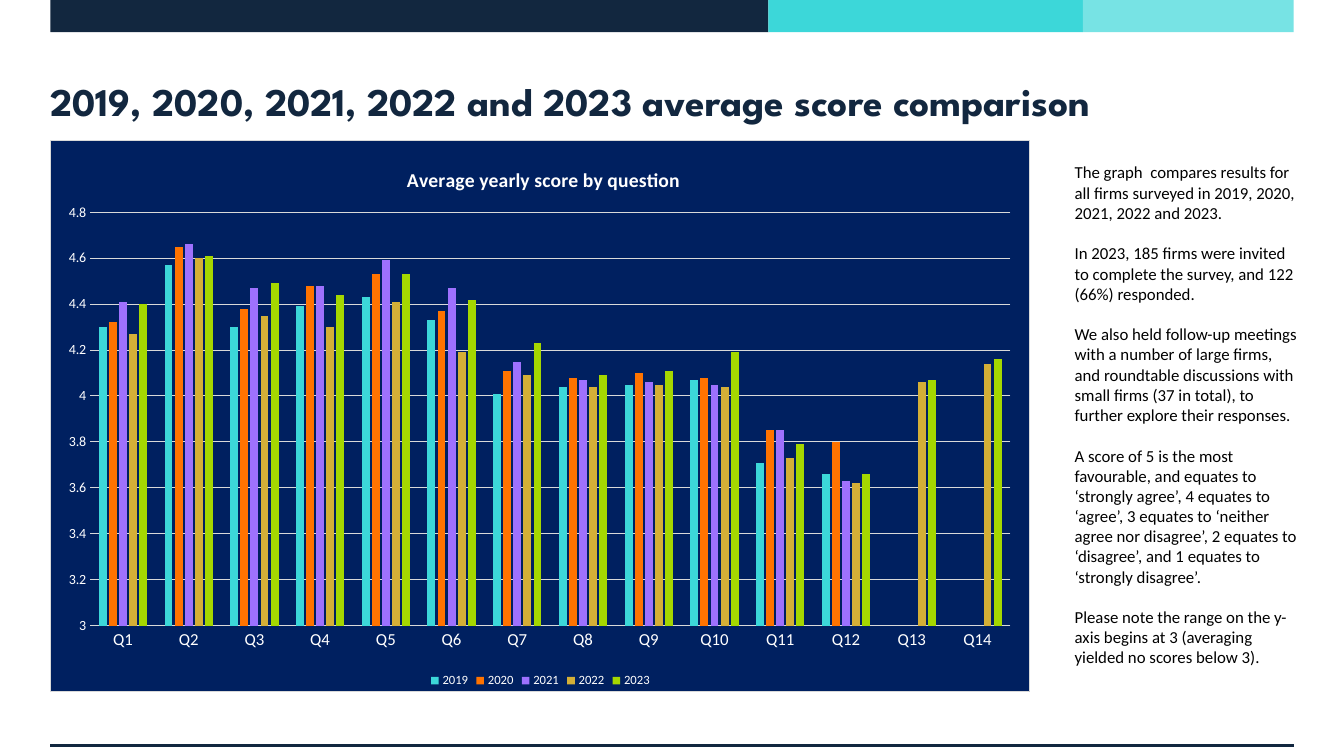
import pptx
import pptx.chart.data
import pptx.dml.color
import pptx.enum.chart
import pptx.enum.shapes
import pptx.enum.text
import pptx.oxml
import pptx.oxml.ns
import pptx.util

Inches, Pt = pptx.util.Inches, pptx.util.Pt
RGBColor = pptx.dml.color.RGBColor
qn, nsdecls = pptx.oxml.ns.qn, pptx.oxml.ns.nsdecls
parse_xml = pptx.oxml.parse_xml

NAVY = RGBColor(0x12, 0x27, 0x3F)
TEAL = RGBColor(0x3C, 0xD7, 0xD9)
AQUA = RGBColor(0x77, 0xE3, 0xE4)
ORANGE = RGBColor(0xFF, 0x73, 0x00)
PURPLE = RGBColor(0x9E, 0x71, 0xFE)
GOLD = RGBColor(0xD4, 0xAF, 0x37)
LIME = RGBColor(0xA5, 0xD7, 0x00)
PANEL = RGBColor(0x00, 0x20, 0x60)
GREY = RGBColor(0xD9, 0xD9, 0xD9)
WHITE = RGBColor(0xFF, 0xFF, 0xFF)
BLACK = RGBColor(0x00, 0x00, 0x00)

# Content
TITLE = "2019, 2020, 2021, 2022 and 2023 average score comparison"
CHART_TITLE = "Average yearly score by question"
NOTES = [
    "The graph  compares results for all firms surveyed in 2019, 2020, 2021, 2022 and 2023.",
    "In 2023, 185 firms were invited to complete the survey, and 122 (66%) responded.",
    "We also held follow-up meetings with a number of large firms, and roundtable "
    "discussions with small firms (37 in total), to further explore their responses.",
    "A score of 5 is the most favourable, and equates to ‘strongly agree’, 4 equates to "
    "‘agree’, 3 equates to ‘neither agree nor disagree’, 2 equates to ‘disagree’, and "
    "1 equates to ‘strongly disagree’.",
    "Please note the range on the y-axis begins at 3 (averaging yielded no scores below 3).",
]
SCORES = [
    ("2019", TEAL, [4.3, 4.57, 4.3, 4.39, 4.43, 4.33, 4.01, 4.04, 4.05, 4.07,
                    3.71, 3.66, None, None]),
    ("2020", ORANGE, [4.32, 4.65, 4.38, 4.48, 4.53, 4.37, 4.11, 4.08, 4.1, 4.08,
                      3.85, 3.8, None, None]),
    ("2021", PURPLE, [4.41, 4.66, 4.47, 4.48, 4.59, 4.47, 4.15, 4.07, 4.06, 4.05,
                      3.85, 3.63, None, None]),
    ("2022", GOLD, [4.27, 4.6, 4.35, 4.3, 4.41, 4.19, 4.09, 4.04, 4.05, 4.04,
                    3.73, 3.62, 4.06, 4.14]),
    ("2023", LIME, [4.4, 4.61, 4.49, 4.44, 4.53, 4.42, 4.23, 4.09, 4.11, 4.19,
                    3.79, 3.66, 4.07, 4.16]),
]
BANDS = [(7.12, NAVY), (3.12, TEAL), (2.09, AQUA)]
LEFT, RIGHT = 0.5, 12.83


def style_font(font, size, color, name="Calibri", bold=False):
    formats = {"size": Pt(size), "name": name, "bold": bold}
    for key, value in formats.items():
        setattr(font, key, value)
    font.color.rgb = color


def style_line(line, color, width):
    line.color.rgb = color
    line.width = Pt(width)


def place(parent, **fractions):
    """Give a chart part a manual layout in fractions of the chart."""
    old = parent.find(qn("c:layout"))
    if old is not None:
        parent.remove(old)
    inner = '<c:layoutTarget val="inner"/>' if "w" in fractions else ""
    modes = '<c:xMode val="edge"/><c:yMode val="edge"/>'
    values = "".join(f'<c:{k} val="{v}"/>' for k, v in fractions.items())
    layout = parse_xml(f'<c:layout {nsdecls("c")}><c:manualLayout>{inner}{modes}{values}'
                       '</c:manualLayout></c:layout>')
    tx = parent.find(qn("c:tx"))
    if tx is None:
        parent.insert(0, layout)
    else:
        tx.addnext(layout)


prs = pptx.Presentation()
prs.slide_width, prs.slide_height = Inches(13.33), Inches(7.5)
s = prs.slides.add_slide(prs.slide_layouts[5])

# Top bands and footer rule
x = LEFT
for width, color in BANDS:
    sp = s.shapes.add_shape(pptx.enum.shapes.MSO_SHAPE.RECTANGLE,
                            Inches(x), 0, Inches(width), Inches(0.32))
    sp.shadow.inherit = False
    sp.fill.solid()
    sp.fill.fore_color.rgb = color
    sp.line.fill.background()
    x += width

rule = s.shapes.add_connector(pptx.enum.shapes.MSO_CONNECTOR.STRAIGHT,
                              Inches(LEFT), Inches(7.4), Inches(RIGHT), Inches(7.4))
style_line(rule.line, NAVY, 2.25)
rule.element.spPr.append(parse_xml(f'<a:effectLst {nsdecls("a")}/>'))

# Title
title = s.shapes.title
title.left, title.top = Inches(LEFT), Inches(0.5)
title.width, title.height = Inches(RIGHT - LEFT), Inches(1)
tf = title.text_frame
TITLE_FRAME = {"margin_left": 0, "margin_right": 0, "margin_top": 0, "margin_bottom": 0,
               "vertical_anchor": pptx.enum.text.MSO_ANCHOR.MIDDLE, "word_wrap": True,
               "auto_size": pptx.enum.text.MSO_AUTO_SIZE.NONE}
for key, value in TITLE_FRAME.items():
    setattr(tf, key, value)
p = tf.paragraphs[0]
p.alignment = pptx.enum.text.PP_ALIGN.LEFT
r = p.add_run()
r.text = TITLE
style_font(r.font, 28, NAVY, "League Spartan", True)

# Chart
data = pptx.chart.data.CategoryChartData()
data.categories = [f"Q{n}" for n in range(1, 15)]
for year, color, values in SCORES:
    data.add_series(year, values)
chart = s.shapes.add_chart(pptx.enum.chart.XL_CHART_TYPE.COLUMN_CLUSTERED, Inches(LEFT),
                           Inches(1.39), Inches(9.72), Inches(5.48), data).chart
style_font(chart.font, 10, WHITE)
chart.element.find(qn("c:chart")).addnext(parse_xml(
    f'<c:spPr {nsdecls("c", "a")}><a:solidFill><a:srgbClr val="{PANEL}"/></a:solidFill>'
    f'<a:ln w="9525"><a:solidFill><a:srgbClr val="{GREY}"/></a:solidFill></a:ln></c:spPr>'))

tf = chart.chart_title.text_frame
r = tf.paragraphs[0].add_run()
r.text = CHART_TITLE
style_font(r.font, 14, WHITE, bold=True)

plot = chart.plots[0]
plot.gap_width, plot.overlap, plot.vary_by_categories = 219, -27, False
for series, (year, color, values) in zip(plot.series, SCORES):
    series.format.fill.solid()
    series.format.fill.fore_color.rgb = color
    series.invert_if_negative = False

# Axes and legend
no_tick = pptx.enum.chart.XL_TICK_MARK.NONE
for axis, size in ((chart.category_axis, 12), (chart.value_axis, 10)):
    axis.major_tick_mark = axis.minor_tick_mark = no_tick
    style_font(axis.tick_labels.font, size, WHITE)
style_line(chart.category_axis.format.line, GREY, 0.75)
value_axis = chart.value_axis
SCALE = {"minimum_scale": 3, "maximum_scale": 4.8, "major_unit": 0.2,
         "has_major_gridlines": True}
for key, value in SCALE.items():
    setattr(value_axis, key, value)
value_axis.format.line.fill.background()
style_line(value_axis.major_gridlines.format.line, GREY, 0.75)

chart.has_legend = True
chart.legend.position = pptx.enum.chart.XL_LEGEND_POSITION.BOTTOM
chart.legend.include_in_layout = False
style_font(chart.legend.font, 9, WHITE)

chart_part = chart.element.find(qn("c:chart"))
place(chart_part.find(qn("c:title")), x=0.36, y=0.04)
place(chart_part.find(qn("c:plotArea")), x=0.04, y=0.13, w=0.94, h=0.75)

# Side notes
box = s.shapes.add_textbox(Inches(10.56), Inches(1.56), Inches(2.45), Inches(5.15))
tf = box.text_frame
tf.word_wrap = True
for i, note in enumerate(NOTES):
    p = tf.paragraphs[0] if i == 0 else tf.add_paragraph()
    p.space_before = Pt(14.6 if i else 0)
    r = p.add_run()
    r.text = note
    style_font(r.font, 12, BLACK)

prs.save("out.pptx")
